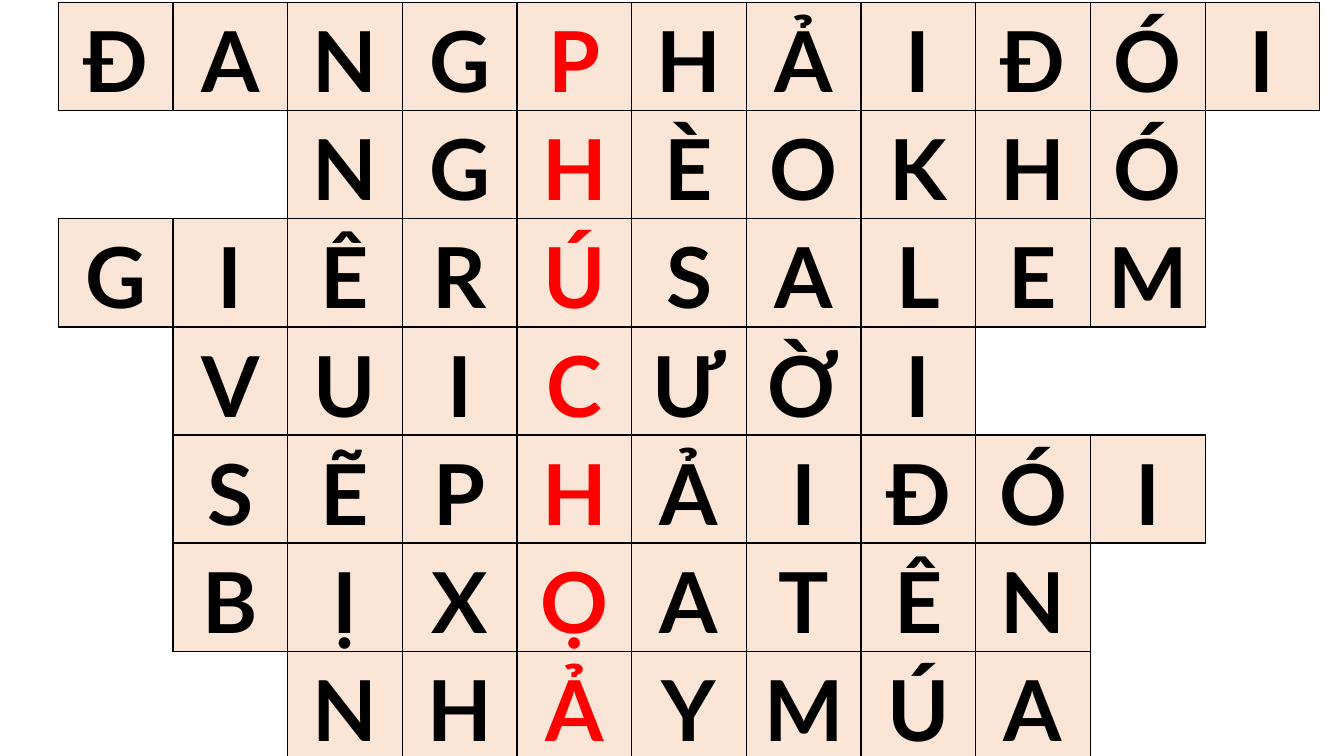
from lxml import etree
from pptx import Presentation
from pptx import util as u
from pptx.dml.color import RGBColor
from pptx.enum import text
from pptx.oxml import ns

ANSWERS = [
    (0, "ĐANGPHẢIĐÓI"),
    (2, "NGHÈOKHÓ"),
    (0, "GIÊRUSALEM".replace("U", "Ú")),
    (1, "VUICƯỜI"),
    (1, "SẼPHẢIĐÓI"),
    (1, "BỊXỌATÊN"),
    (2, "NHẢYMÚA"),
]
KEY_COLUMN = 4
COLUMNS = 11
LEFT, TOP = u.Cm(1.47), u.Cm(0.07)
CELL_WIDTH, CELL_HEIGHT = u.Cm(2.89), u.Cm(2.69)
PEACH, WHITE, BLACK, RED = "FBE5D6", "FFFFFF", "000000", "FF0000"
SIDES = {"lnL": (0, -1), "lnR": (0, 1), "lnT": (-1, 0), "lnB": (1, 0)}


def color(hex_code):
    return RGBColor.from_string(hex_code)


def paint(cell, fill):
    cell.fill.solid()
    cell.fill.fore_color.rgb = color(fill)


def add_edge(cell, side, visible):
    properties = cell._tc.get_or_add_tcPr()
    edge = etree.SubElement(properties, ns.qn(f"a:{side}"), w=str(u.Pt(1)))
    if visible:
        stroke = etree.SubElement(edge, ns.qn("a:solidFill"))
        etree.SubElement(stroke, ns.qn("a:srgbClr"), val=BLACK)
    else:
        etree.SubElement(edge, ns.qn("a:noFill"))


def write_letter(cell, letter, ink):
    cell.text = letter
    cell.vertical_anchor = text.MSO_ANCHOR.MIDDLE
    cell.margin_left = cell.margin_right = u.Cm(0.19)
    cell.margin_top = cell.margin_bottom = 0
    paragraph = cell.text_frame.paragraphs[0]
    paragraph.alignment = text.PP_ALIGN.CENTER
    paragraph.line_spacing = 1.07
    paragraph.space_after = u.Pt(8)
    paragraph.font.name = "Lato"
    paragraph.font.size = u.Pt(60)
    paragraph.font.bold = True
    paragraph.font.color.rgb = color(ink)


def main():
    deck = Presentation()
    deck.slide_width, deck.slide_height = u.Cm(33.87), u.Cm(19.05)
    slide = deck.slides.add_slide(deck.slide_layouts[6])
    crossword = slide.shapes.add_table(
        len(ANSWERS), COLUMNS, LEFT, TOP,
        CELL_WIDTH * COLUMNS, CELL_HEIGHT * len(ANSWERS)).table
    crossword.first_row = crossword.horz_banding = False
    for column in crossword.columns:
        column.width = CELL_WIDTH
    for row in crossword.rows:
        row.height = CELL_HEIGHT

    letters = {(row, start + step): letter
               for row, (start, answer) in enumerate(ANSWERS)
               for step, letter in enumerate(answer)}
    for row in range(len(ANSWERS)):
        for column in range(COLUMNS):
            cell = crossword.cell(row, column)
            letter = letters.get((row, column))
            for side, (down, across) in SIDES.items():
                neighbour = (row + down, column + across)
                add_edge(cell, side, letter or neighbour in letters)
            paint(cell, PEACH if letter else WHITE)
            if letter:
                write_letter(cell, letter, RED if column == KEY_COLUMN else BLACK)
    deck.save("out.pptx")


if __name__ == "__main__":
    main()
